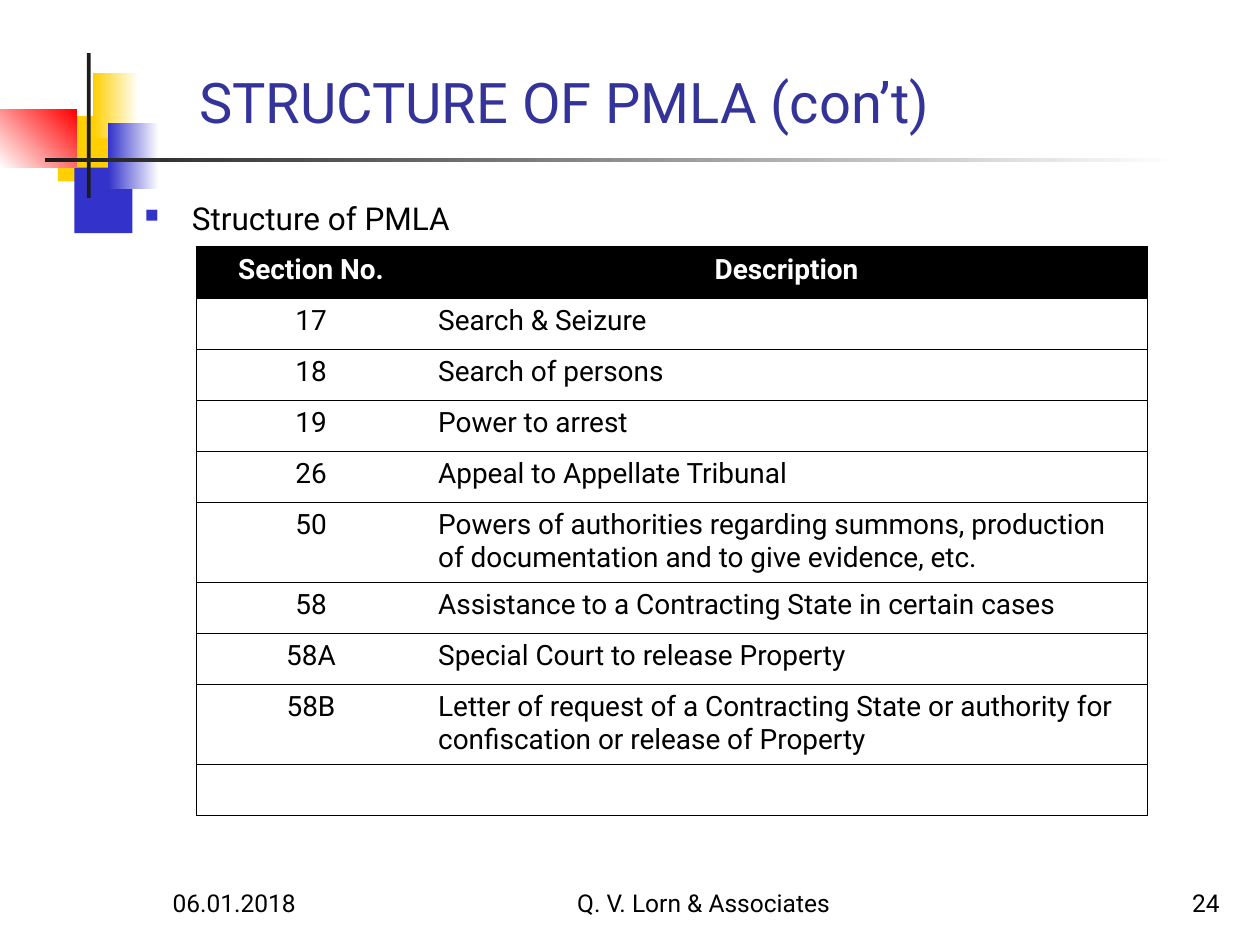
import pptx
import pptx.util
import pptx.dml.color
import pptx.enum.shapes
import pptx.enum.text
import pptx.oxml
import pptx.oxml.ns

Cm = pptx.util.Cm
Pt = pptx.util.Pt
RGBColor = pptx.dml.color.RGBColor
Align = pptx.enum.text.PP_ALIGN
Anchor = pptx.enum.text.MSO_ANCHOR

BLACK = RGBColor(0x00, 0x00, 0x00)
WHITE = RGBColor(0xFF, 0xFF, 0xFF)
INK = RGBColor(0x1C, 0x1C, 0x1C)
GOLD = RGBColor(0xFF, 0xCF, 0x01)
BLUE = RGBColor(0x33, 0x33, 0xCC)
NAVY = RGBColor(0x33, 0x33, 0x99)
RED = RGBColor(0xFF, 0x00, 0x00)

# Section, description, lines of text
ROWS = [
    ("Section No.", "Description", 1),
    ("17", "Search & Seizure", 1),
    ("18", "Search of persons", 1),
    ("19", "Power to arrest", 1),
    ("26", "Appeal to Appellate Tribunal", 1),
    ("50", "Powers of authorities regarding summons, production "
           "of documentation and to give evidence, etc.", 2),
    ("58", "Assistance to a Contracting State in certain cases", 1),
    ("58A", "Special Court to release Property", 1),
    ("58B", "Letter of request of a Contracting State or authority for "
            "confiscation or release of Property", 2),
    ("", "", 1),
]


def xml(text):
    return pptx.oxml.parse_xml(
        text.replace("/>", " " + pptx.oxml.ns.nsdecls("a") + "/>", 1)
        if text.count("<") == 1
        else text.replace(">", " " + pptx.oxml.ns.nsdecls("a") + ">", 1))


class Deck:
    font = "Roboto"

    def __init__(self):
        self.prs = pptx.Presentation()
        self.prs.slide_width, self.prs.slide_height = Cm(25.4), Cm(19.05)
        self.slide = self.prs.slides.add_slide(self.prs.slide_layouts[5])

    def style(self, para, size, color=BLACK, align=Align.LEFT, bold=False):
        para.alignment = align
        font = para.font
        font.name, font.size, font.bold = self.font, Pt(size), bold
        font.color.rgb = color

    def block(self, box, color, end=None, angle=0):
        """Rectangle, solid or fading from color to end."""
        shape = self.slide.shapes.add_shape(
            pptx.enum.shapes.MSO_SHAPE.RECTANGLE, *map(Cm, box))
        shape.shadow.inherit = False
        shape.line.fill.background()
        if end is None:
            shape.fill.solid()
            shape.fill.fore_color.rgb = color
        else:
            shape.fill.gradient()
            shape.fill.gradient_angle = angle
            for stop, tint in zip(shape.fill.gradient_stops, (color, end)):
                stop.color.rgb = tint

    def title(self, box, text):
        shape = self.slide.shapes.title
        shape.left, shape.top, shape.width, shape.height = map(Cm, box)
        frame = shape.text_frame
        frame.text = text
        frame.auto_size = pptx.enum.text.MSO_AUTO_SIZE.NONE
        frame.vertical_anchor = Anchor.BOTTOM
        self.style(frame.paragraphs[0], 32, NAVY)

    def text(self, box, text, size, align=Align.LEFT, anchor=Anchor.BOTTOM):
        frame = self.slide.shapes.add_textbox(*map(Cm, box)).text_frame
        frame.word_wrap = True
        frame.vertical_anchor = anchor
        para = frame.paragraphs[0]
        para.text = text
        self.style(para, size, align=align)
        return para

    def bullet(self, box, text):
        para = self.text(box, text, 18, anchor=Anchor.TOP)
        props = para._p.get_or_add_pPr()
        props.set("marL", str(Cm(0.95)))
        props.set("indent", str(-Cm(0.95)))
        mark = (f'<a:buClr><a:srgbClr val="{BLUE}"/></a:buClr>',
                '<a:buSzPct val="60000"/>', '<a:buChar char="■"/>')
        # Bullet marks come before the default run style
        for spot, item in enumerate(mark):
            props.insert(spot, xml(item))

    def edges(self, cell, sides):
        props = cell._tc.get_or_add_tcPr()
        for spot, side in enumerate("LRTB"):
            paint = (f'<a:solidFill><a:srgbClr val="{BLACK}"/></a:solidFill>'
                     if side in sides else "<a:noFill/>")
            props.insert(spot, xml(
                f'<a:ln{side} w="{Pt(0.75)}">{paint}</a:ln{side}>'))

    def table(self, left, top, widths, rows):
        high = [1.03 if row[2] == 1 else 1.55 for row in rows]
        grid = self.slide.shapes.add_table(
            len(rows), len(widths), Cm(left), Cm(top),
            Cm(sum(widths)), Cm(sum(high))).table
        grid.horz_banding = False
        for col, width in zip(grid.columns, widths):
            col.width = Cm(width)
        for r, row in enumerate(rows):
            grid.rows[r].height = Cm(high[r])
            head = r == 0
            for c, text in enumerate(row[:2]):
                cell = grid.cell(r, c)
                cell.text = text
                cell.fill.solid()
                cell.fill.fore_color.rgb = BLACK if head else WHITE
                self.style(cell.text_frame.paragraphs[0], 16,
                           WHITE if head else BLACK,
                           Align.CENTER if head or c == 0 else Align.LEFT,
                           head)
                self.edges(cell, "LTB" if c == 0 else "RTB")


def main():
    deck = Deck()

    # Corner blocks and rules
    deck.block((1.17, 2.34, 1.22, 1.32), GOLD)
    deck.block((1.5, 3.38, 1.17, 1.32), BLUE)
    deck.block((1.88, 1.47, 0.91, 1.32), GOLD, WHITE)
    deck.block((2.18, 2.49, 1.02, 1.32), BLUE, WHITE)
    deck.block((0, 2.21, 1.55, 1.17), WHITE, RED, 45)
    deck.block((1.75, 1.07, 0.08, 2.92), INK)
    deck.block((0.91, 3.18, 22.86, 0.08), INK, WHITE)

    # Title, lead line and table
    deck.title((3.76, 1.27, 21.64, 1.57), "STRUCTURE OF PMLA (con’t)")
    deck.bullet((2.67, 3.89, 21.59, 13.59), "Structure of PMLA")
    deck.table(3.96, 4.98, (4.62, 14.55), ROWS)

    # Footer
    foot = 17.35
    deck.text((3.23, foot, 5.28, 1.27), "06.01.2018", 14)
    deck.text((10.16, foot, 8.05, 1.27), "Q. V. Lorn & Associates", 14,
              Align.CENTER)
    deck.text((19.56, foot, 5.28, 1.27), "24", 14, Align.RIGHT)

    deck.prs.save("out.pptx")


if __name__ == "__main__":
    main()
